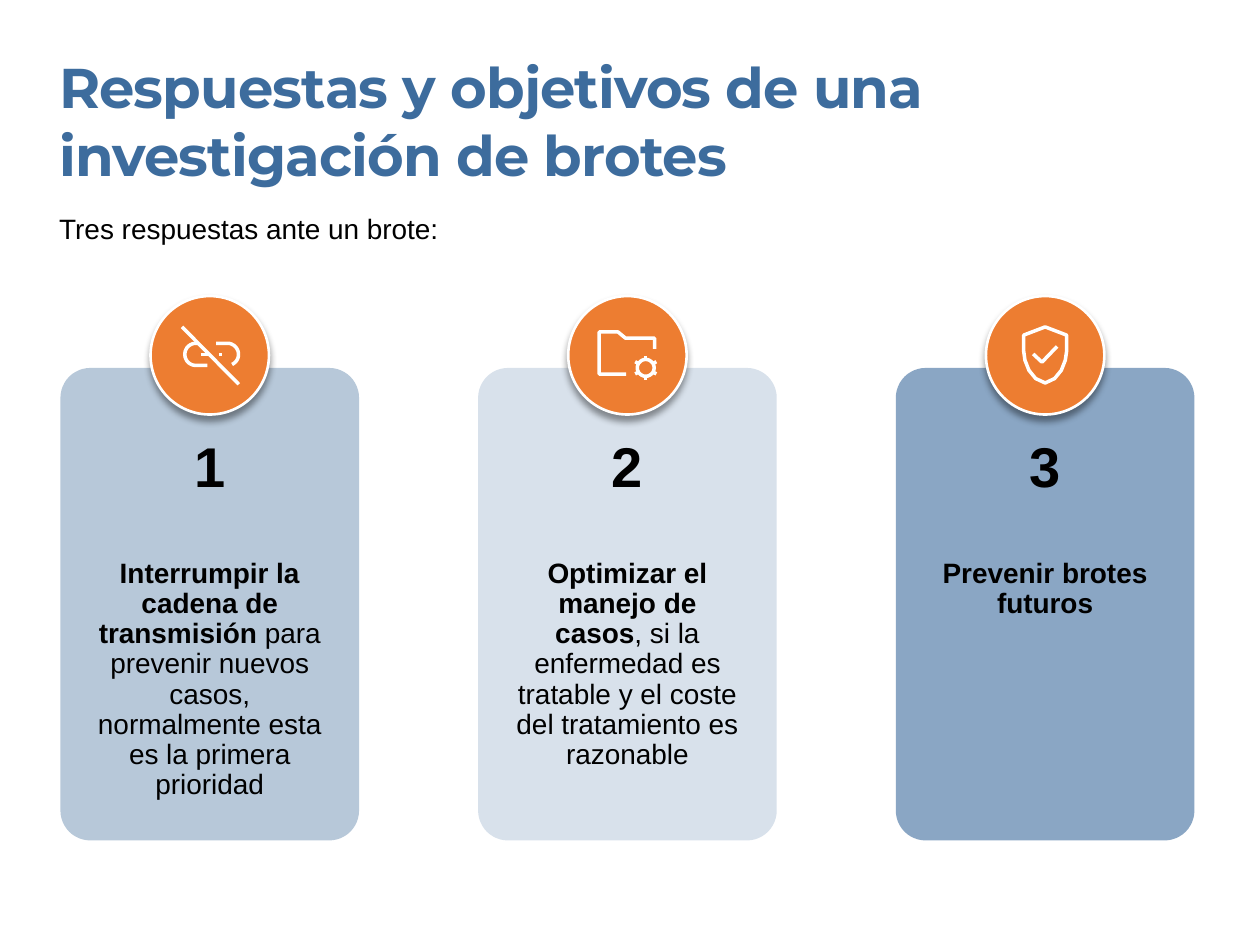
import math
from lxml import etree
from pptx import Presentation, util as u
from pptx.dml import color
from pptx.enum import shapes, text
from pptx.oxml import ns


def rgb(value):
    return color.RGBColor.from_string(value)


def arc(cx, cy, radius, start, end, steps=24):
    angles = (math.radians(start + (end - start) * i / steps) for i in range(steps + 1))
    return [(cx + radius * math.cos(a), cy + radius * math.sin(a)) for a in angles]


class Deck:
    COLUMNS = 100
    BODY_FONT, TITLE_FONT = "Arial", "Montserrat"
    BLUE, ORANGE, BLACK, WHITE = "3D6C9D", "ED7D31", "000000", "FFFFFF"

    def __init__(self):
        self.show = Presentation()
        self.show.slide_width, self.show.slide_height = u.Inches(10), u.Inches(7.5)
        self.cell = self.show.slide_width // self.COLUMNS
        self.slide = self.show.slides.add_slide(self.show.slide_layouts[5])

    def cells(self, *counts):
        return [round(count * self.cell) for count in counts]

    def add_runs(self, paragraph, pieces, size, font=BODY_FONT, ink=BLACK):
        for words, bold in pieces:
            run = paragraph.add_run()
            run.text = words
            run.font.size, run.font.bold, run.font.name = u.Pt(size), bold, font
            run.font.color.rgb = rgb(ink)

    def frame(self, shape, insets=(0, 0, 0, 0)):
        frame = shape.text_frame
        frame.word_wrap, frame.auto_size = True, text.MSO_AUTO_SIZE.NONE
        frame.vertical_anchor = text.MSO_ANCHOR.TOP
        (frame.margin_left, frame.margin_top,
         frame.margin_right, frame.margin_bottom) = self.cells(*insets)
        return frame

    def title(self, words, box):
        heading = self.slide.shapes.title
        heading.left, heading.top, heading.width, heading.height = self.cells(*box)
        paragraph = self.frame(heading).paragraphs[0]
        paragraph.alignment = text.PP_ALIGN.LEFT
        self.add_runs(paragraph, [(words, True)], 32, self.TITLE_FONT, self.BLUE)
        paragraph.runs[0].font._element.set("spc", "-50")

    def textbox(self, box, insets=(0, 0, 0, 0)):
        return self.frame(self.slide.shapes.add_textbox(*self.cells(*box)), insets)

    def shape(self, kind, box, fill):
        shape = self.slide.shapes.add_shape(kind, *self.cells(*box))
        shape.shadow.inherit = False
        shape.fill.solid()
        shape.fill.fore_color.rgb = rgb(fill)
        shape.line.fill.background()
        return shape

    def card(self, center, fill, opacity, number, pieces):
        panel = self.shape(shapes.MSO_SHAPE.ROUNDED_RECTANGLE,
                           (center - 11.85, 29.2, 23.7, 37.5), fill)
        panel.adjustments[0] = 0.1
        if opacity < 100:
            tint = panel._element.spPr.find(".//" + ns.qn("a:srgbClr"))
            etree.SubElement(tint, ns.qn("a:alpha"), val=str(opacity * 1000))
        frame = self.textbox((center - 11.15, 29.9, 22.3, 36.1), (2, 4.95, 2, 1.2))
        for content, size in (([(number, True)], 32), (pieces, 16)):
            paragraph = frame.paragraphs[0] if size == 32 else frame.add_paragraph()
            paragraph.alignment = text.PP_ALIGN.CENTER
            paragraph.line_spacing = 0.9
            paragraph.space_after = u.Pt(34 if size == 32 else 0)
            self.add_runs(paragraph, content, size)

    def badge(self, center, row, strokes):
        disc = self.shape(shapes.MSO_SHAPE.OVAL,
                          (center - 4.7, row - 4.7, 9.4, 9.4), self.ORANGE)
        disc.line.color.rgb, disc.line.width = rgb(self.WHITE), u.Pt(1.5)
        effects = disc._element.spPr.find(ns.qn("a:effectLst"))
        shadow = etree.SubElement(effects, ns.qn("a:outerShdw"), blurRad=str(int(u.Pt(4))),
                                  dist=str(int(u.Pt(3))), dir="5400000", rotWithShape="0")
        tint = etree.SubElement(shadow, ns.qn("a:srgbClr"), val=self.BLACK)
        etree.SubElement(tint, ns.qn("a:alpha"), val="40000")
        self.icon(center, row, strokes)

    def icon(self, center, row, strokes):
        builder = self.slide.shapes.build_freeform(*strokes[0][0], scale=self.cell / 100)
        for index, stroke in enumerate(strokes):
            if index:
                builder.move_to(*stroke[0])
            builder.add_line_segments(stroke[1:], close=stroke[0] == stroke[-1])
        outline = builder.convert_to_shape(*self.cells(center, row))
        outline.shadow.inherit = False
        outline.fill.background()
        outline.line.color.rgb, outline.line.width = rgb(self.WHITE), u.Pt(2)


def broken_link():
    return [
        [(-220, -225), (230, 230)],
        [(-90, -95)] + arc(-110, -7, 88, -90, -270) + [(-20, 81)],
        [(50, -95)] + arc(140, -7, 88, -90, 65),
        [(-70, -5), (-5, -5)],
        [(75, -5), (100, -5)],
    ]


def managed_folder():
    gear_x, gear_y = 145, 100
    inner, outer = (arc(gear_x, gear_y, r, 30, 390, 6) for r in (75, 97))
    folder = [(-10, 150), (-225, 150), (-225, -185), (-75, -185),
              (-15, -135), (215, -135), (215, -50)]
    teeth = [list(tooth) for tooth in zip(inner[:6], outer[:6])]
    return [folder, arc(gear_x, gear_y, 67, 0, 360)] + teeth


def checked_shield():
    right = [(0, -225), (170, -160), (170, -30), (160, 40),
             (128, 120), (75, 185), (0, 220)]
    left = [(-x, y) for x, y in reversed(right[:-1])]
    return [right + left, [(-95, -10), (-25, 55), (95, -70)]]


RESPONSES = [
    ("B7C8D9", 100, broken_link(),
     [("Interrumpir la cadena de transmisión ", True),
      ("para prevenir nuevos casos, normalmente esta es la primera prioridad", False)]),
    (Deck.BLUE, 20, managed_folder(),
     [("Optimizar el manejo de casos", True),
      (", si la enfermedad es tratable y el coste del tratamiento es razonable", False)]),
    (Deck.BLUE, 60, checked_shield(), [("Prevenir brotes futuros", True)]),
]


def main():
    deck = Deck()
    deck.title("Respuestas y objetivos de una investigación de brotes", (4.7, 4.2, 85.5, 10.8))
    intro = deck.textbox((4.7, 16.8, 70.2, 2.7))
    deck.add_runs(intro.paragraphs[0], [("Tres respuestas ante un brote:", False)], 16)
    for index, (fill, opacity, strokes, pieces) in enumerate(RESPONSES):
        center = 16.65 + 33.15 * index
        deck.card(center, fill, opacity, str(index + 1), pieces)
        deck.badge(center, 28.2, strokes)
    deck.show.save("out.pptx")


if __name__ == "__main__":
    main()
